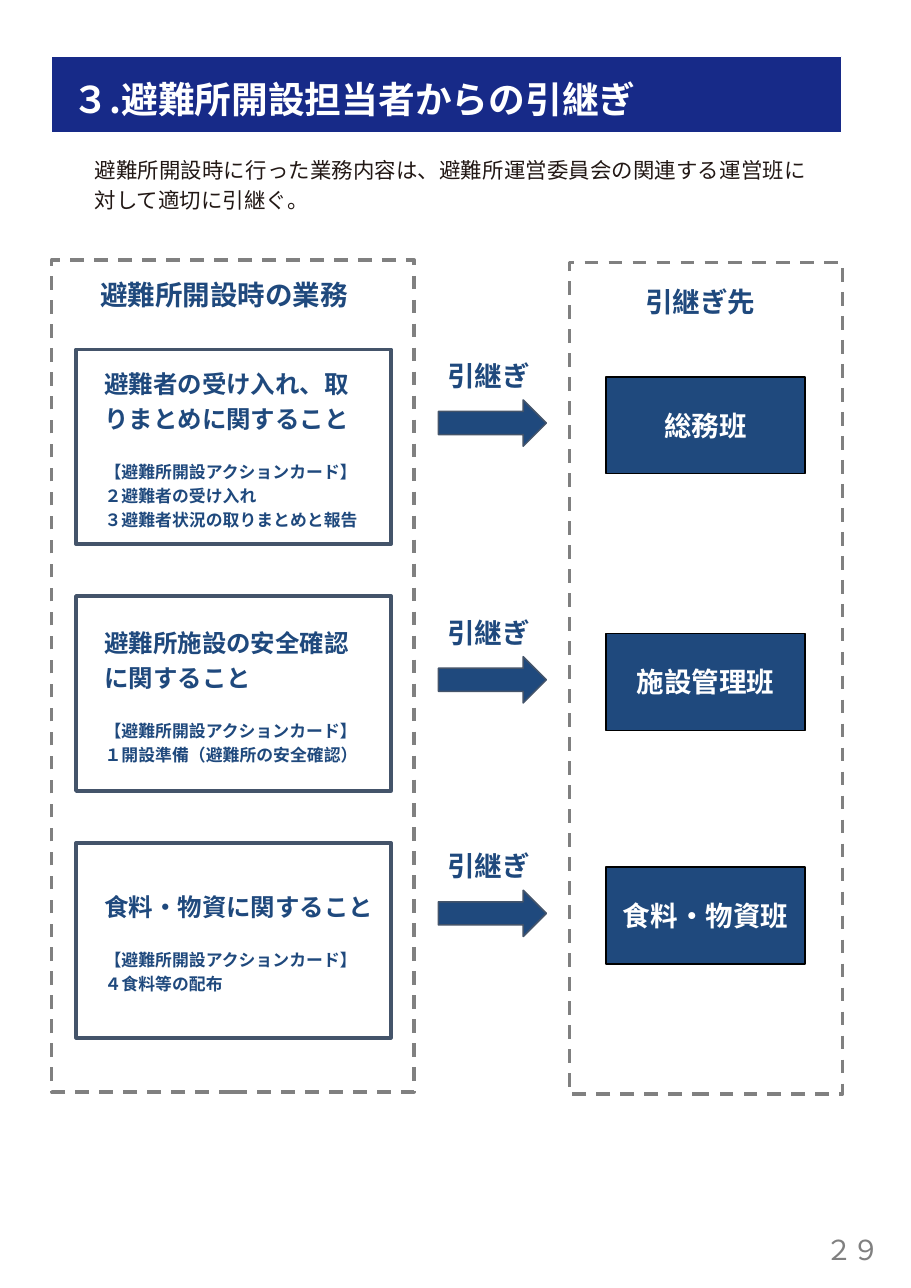
from lxml.etree import SubElement
from pptx import Presentation
from pptx.dml.color import RGBColor
from pptx.enum.dml import MSO_LINE_DASH_STYLE as Dash
from pptx.enum.shapes import MSO_SHAPE as Shape
from pptx.enum.text import MSO_ANCHOR as Anchor, MSO_AUTO_SIZE as AutoSize, PP_ALIGN as Align
from pptx.oxml.ns import qn
from pptx.util import Inches, Pt

# Content
TITLE = "３.避難所開設担当者からの引継ぎ"
INTRO = "避難所開設時に行った業務内容は、避難所運営委員会の関連する運営班に対して適切に引継ぐ。"
HANDOVER = "引継ぎ"
CARD_HEADING = "【避難所開設アクションカード】"
PAGE_NUMBER = "２９"
# task, action cards, team, team offset below the row top, right inset of the task
ROWS = [
    ("避難者の受け入れ、取りまとめに関すること",
     ["２避難者の受け入れ", "３避難者状況の取りまとめと報告"], "総務班", 0.25, 0.24),
    ("避難所施設の安全確認に関すること",
     ["１開設準備（避難所の安全確認）"], "施設管理班", 0.34, 0.24),
    ("食料・物資に関すること",
     ["４食料等の配布"], "食料・物資班", 0.22, 0.08),
]
# frame (left, top, width, height), heading, heading (left, top, width, height)
FRAMES = [
    ((0.47, 2.36, 3.29, 7.55), "避難所開設時の業務", (0.81, 2.48, 2.87, 0.4)),
    ((5.17, 2.38, 2.48, 7.55), "引継ぎ先", (5.76, 2.54, 1.58, 0.4)),
]


class Theme:
    font, number_font = "Noto Sans CJK JP", "Arial"
    banner, navy, slate = "172A88", "1F497D", "44546A"
    grey, ink, white, black = "808080", "221815", "FFFFFF", "000000"
    title, heading, task, intro, card = 24, 18, 16, 14, 11
    single, loose = 1.19, 1.43  # line pitch as a share of the type size


# Grid, in inches
PAGE_W, PAGE_H = 8.27, 11.69
ROW_TOP, ROW_STEP = 3.17, 2.24
TASK_X, TASK_W, TASK_H = 0.69, 2.86, 1.77
LABEL_X, LABEL_W, LABEL_H = 3.96, 1.01, 0.4
ARROW_X, ARROW_W, ARROW_H = 3.98, 0.98, 0.42
TEAM_X, TEAM_W, TEAM_H = 5.5, 1.81, 0.88
HALF_STEP = 0.21  # label above and arrow below the team top


def paint(sp, fill=None, line=None, width=1):
    if fill:
        sp.fill.solid()
        sp.fill.fore_color.rgb = RGBColor.from_string(fill)
    else:
        sp.fill.background()
    sp.line.color.rgb = RGBColor.from_string(line)
    sp.line.width = Pt(width)


def add_box(slide, kind, box, fill=None, line=Theme.black, width=1):
    sp = slide.shapes.add_shape(kind, *map(Inches, box))
    sp.shadow.inherit = False
    paint(sp, fill, line, width)
    return sp


def write(sp, lines, inset=(0.1, 0.05, 0.1, 0.05), anchor=Anchor.TOP, align=Align.LEFT,
          color=Theme.navy, bold=True, pitch=Theme.single, font=Theme.font):
    """Fill a shape with paragraphs given as (text, size, space before)."""
    tf = sp.text_frame
    tf.text = "\n".join(text for text, _, _ in lines)
    tf.word_wrap, tf.auto_size, tf.vertical_anchor = True, AutoSize.NONE, anchor
    tf.margin_left, tf.margin_top, tf.margin_right, tf.margin_bottom = map(Inches, inset)
    for p, (_, size, before) in zip(tf.paragraphs, lines):
        p.alignment = align
        p.line_spacing, p.space_before = Pt(round(size * pitch, 1)), Pt(before)
        for r in p.runs:
            r.font.size, r.font.bold, r.font.name = Pt(size), bold, font
            r.font.color.rgb = RGBColor.from_string(color)
            SubElement(r._r.get_or_add_rPr(), qn("a:ea"), typeface=font)


def add_text(slide, box, text, size=Theme.heading, **style):
    write(slide.shapes.add_textbox(*map(Inches, box)), [(text, size, 0)], **style)


def add_banner(slide):
    sp = slide.shapes.title
    sp.left, sp.top, sp.width, sp.height = map(Inches, (0.47, 0.51, 7.17, 0.69))
    paint(sp, Theme.banner, Theme.white, 0.75)
    write(sp, [(TITLE, Theme.title, 0)], inset=(0.19, 0.19, 0.1, 0), color=Theme.white)


def add_row(slide, top, task, cards, team, team_offset, right_inset):
    sp = add_box(slide, Shape.RECTANGLE, (TASK_X, top, TASK_W, TASK_H),
                 line=Theme.slate, width=2.25)
    lines = [(task, Theme.task, 0), (CARD_HEADING, Theme.card, Theme.card * Theme.loose)]
    lines += [(card, Theme.card, 0) for card in cards]
    write(sp, lines, inset=(0.26, 0, right_inset, 0), anchor=Anchor.MIDDLE, pitch=Theme.loose)

    team_top = top + team_offset
    add_text(slide, (LABEL_X, team_top - HALF_STEP, LABEL_W, LABEL_H), HANDOVER)
    add_box(slide, Shape.RIGHT_ARROW, (ARROW_X, team_top + HALF_STEP, ARROW_W, ARROW_H),
            Theme.navy, Theme.slate)
    sp = add_box(slide, Shape.RECTANGLE, (TEAM_X, team_top, TEAM_W, TEAM_H), Theme.navy)
    write(sp, [(team, Theme.heading, 0)], anchor=Anchor.MIDDLE, align=Align.CENTER,
          color=Theme.white)


def main():
    prs = Presentation()
    prs.slide_width, prs.slide_height = Inches(PAGE_W), Inches(PAGE_H)
    slide = prs.slides.add_slide(prs.slide_layouts[5])

    add_banner(slide)
    add_text(slide, (0.78, 1.37, 6.54, 0.56), INTRO, Theme.intro, inset=(0.08, 0.01, 0, 0),
             align=Align.JUSTIFY, color=Theme.ink, bold=False, pitch=Theme.loose)
    for i, row in enumerate(ROWS):
        add_row(slide, ROW_TOP + i * ROW_STEP, *row)
    for frame, heading, heading_box in FRAMES:
        sp = add_box(slide, Shape.RECTANGLE, frame, line=Theme.grey, width=2.25)
        sp.line.dash_style = Dash.DASH
        add_text(slide, heading_box, heading)
    add_text(slide, (7.38, 11.14, 0.72, 0.4), PAGE_NUMBER, align=Align.CENTER,
             color=Theme.grey, bold=False, font=Theme.number_font)
    prs.save("out.pptx")


if __name__ == "__main__":
    main()
